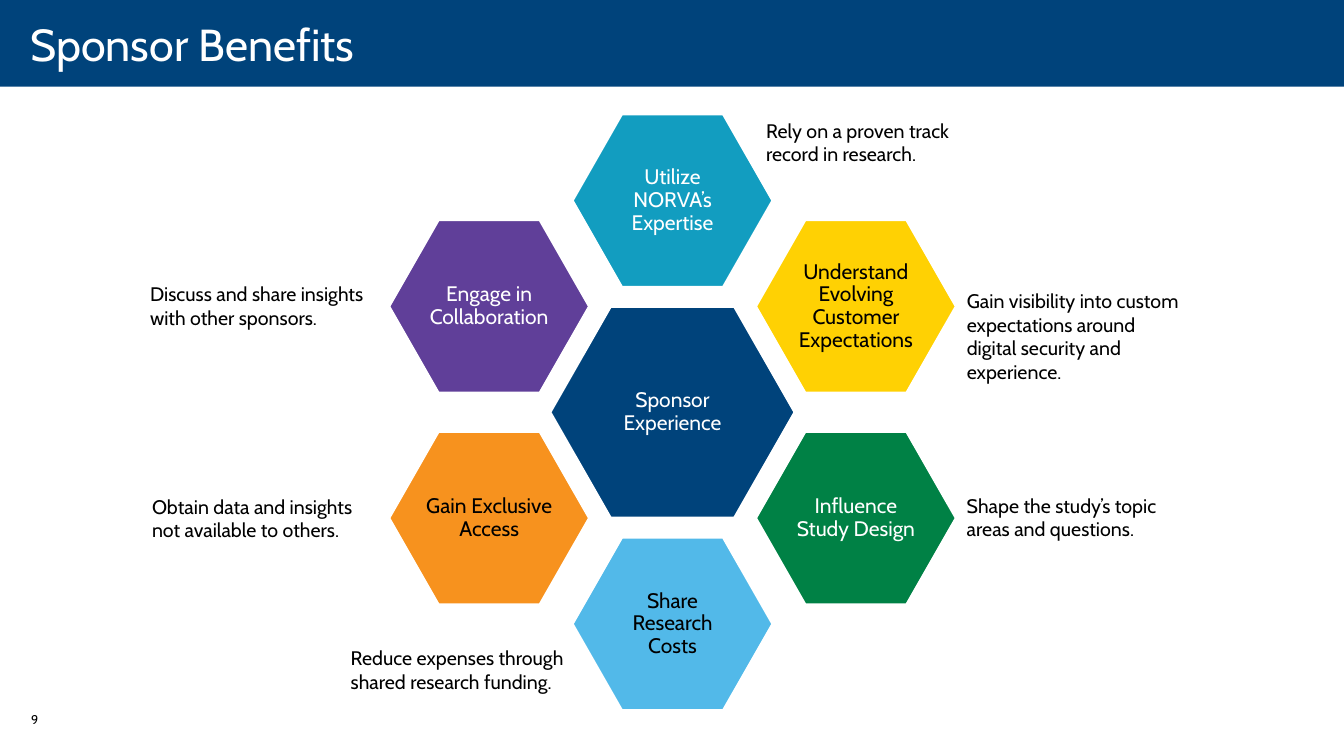
"""Build the Sponsor Benefits slide: a ring of hexagons around a centre, with notes."""
from math import cos, radians, sin

from pptx import Presentation
from pptx.dml.color import RGBColor
from pptx.enum import shapes, text
from pptx.util import Inches, Pt

FONT = "Cabin"
NAVY, WHITE, BLACK = "00437B", "FFFFFF", "000000"
CENTRE_X, CENTRE_Y, RADIUS = 6.67, 4.09, 2.1
CENTRE_SIZE, RING_SIZE = (2.43, 2.1), (1.99, 1.72)
CORNER = 0.247

RING = [
    ("Utilize NORVA’s Expertise", "129DC0", WHITE),
    ("Understand Evolving Customer Expectations", "FFD103", BLACK),
    ("Influence Study Design", "008145", WHITE),
    ("Share Research Costs", "52B9E9", BLACK),
    ("Gain Exclusive Access", "F7921E", BLACK),
    ("Engage in Collaboration", "603F99", WHITE),
]
NOTES = [
    ("Rely on a proven track record in research.", 7.5, 1.13, 2.57, 0.57, 14),
    ("Gain visibility into custom expectations around digital security and experience.",
     9.49, 2.82, 2.35, 1.04, 14),
    ("Shape the study’s topic areas and questions.", 9.49, 4.85, 2.46, 0.57, 14),
    ("Reduce expenses through shared research funding.", 3.38, 6.36, 2.46, 0.57, 14),
    ("Obtain data and insights not available to others.", 1.41, 4.86, 2.46, 0.57, 14),
    ("Discuss and share insights with other sponsors.", 1.39, 2.75, 2.46, 0.57, 14),
    ("9", 0.21, 7.01, 0.49, 0.4, 9),
]


def rgb(value):
    return RGBColor.from_string(value)


def write(tf, content, size, color, align=text.PP_ALIGN.LEFT):
    tf.text = content
    tf.word_wrap = True
    p = tf.paragraphs[0]
    p.alignment = align
    font = p.runs[0].font
    font.name, font.size = FONT, Pt(size)
    font.color.rgb = rgb(color)
    return p


def set_margins(tf, left, top, right, bottom):
    tf.margin_left, tf.margin_top = Inches(left), Inches(top)
    tf.margin_right, tf.margin_bottom = Inches(right), Inches(bottom)


def add_hexagon(s, label, x, y, size, margins, fill, color):
    w, h = size
    half, flat = w / 2, w / 2 - w * CORNER
    points = [(-half, 0), (-flat, -h / 2), (flat, -h / 2),
              (half, 0), (flat, h / 2), (-flat, h / 2)]
    corners = [(Inches(x + dx), Inches(y + dy)) for dx, dy in points]
    builder = s.shapes.build_freeform(*corners[0])
    builder.add_line_segments(corners[1:], close=True)
    sp = builder.convert_to_shape()
    sp.shadow.inherit = False
    sp.fill.solid()
    sp.fill.fore_color.rgb = rgb(fill)
    sp.line.color.rgb = rgb(WHITE)
    sp.line.width = Pt(2)
    tf = sp.text_frame
    set_margins(tf, *margins, *margins)
    tf.vertical_anchor = text.MSO_ANCHOR.MIDDLE
    p = write(tf, label, 15, color, text.PP_ALIGN.CENTER)
    p.line_spacing = 0.9


def add_header(s, width):
    band = s.shapes.add_shape(shapes.MSO_SHAPE.RECTANGLE, 0, 0, width, Inches(0.86))
    band.shadow.inherit = False
    band.fill.solid()
    band.fill.fore_color.rgb = rgb(NAVY)
    band.line.fill.background()
    title = s.shapes.title
    title._element.addprevious(band._element)
    title.left, title.top = 0, Inches(-0.05)
    title.width, title.height = width, Inches(0.97)
    tf = title.text_frame
    set_margins(tf, 0.3, 0, 0.2, 0)
    tf.vertical_anchor = text.MSO_ANCHOR.MIDDLE
    write(tf, "Sponsor Benefits", 32, WHITE)


def main():
    prs = Presentation()
    prs.slide_width, prs.slide_height = Inches(13.33), Inches(7.5)
    s = prs.slides.add_slide(prs.slide_layouts[5])
    add_header(s, prs.slide_width)
    add_hexagon(s, "Sponsor Experience", CENTRE_X, CENTRE_Y, CENTRE_SIZE,
                (0.42, 0.37), NAVY, WHITE)
    for i, (label, fill, color) in enumerate(RING):
        angle = radians(360 / len(RING) * i)
        x, y = CENTRE_X + RADIUS * sin(angle), CENTRE_Y - RADIUS * cos(angle)
        add_hexagon(s, label, x, y, RING_SIZE, (0.35, 0.31), fill, color)
    for content, *box, size in NOTES:
        sp = s.shapes.add_textbox(*map(Inches, box))
        write(sp.text_frame, content, size, BLACK)
    prs.save("out.pptx")


if __name__ == "__main__":
    main()
